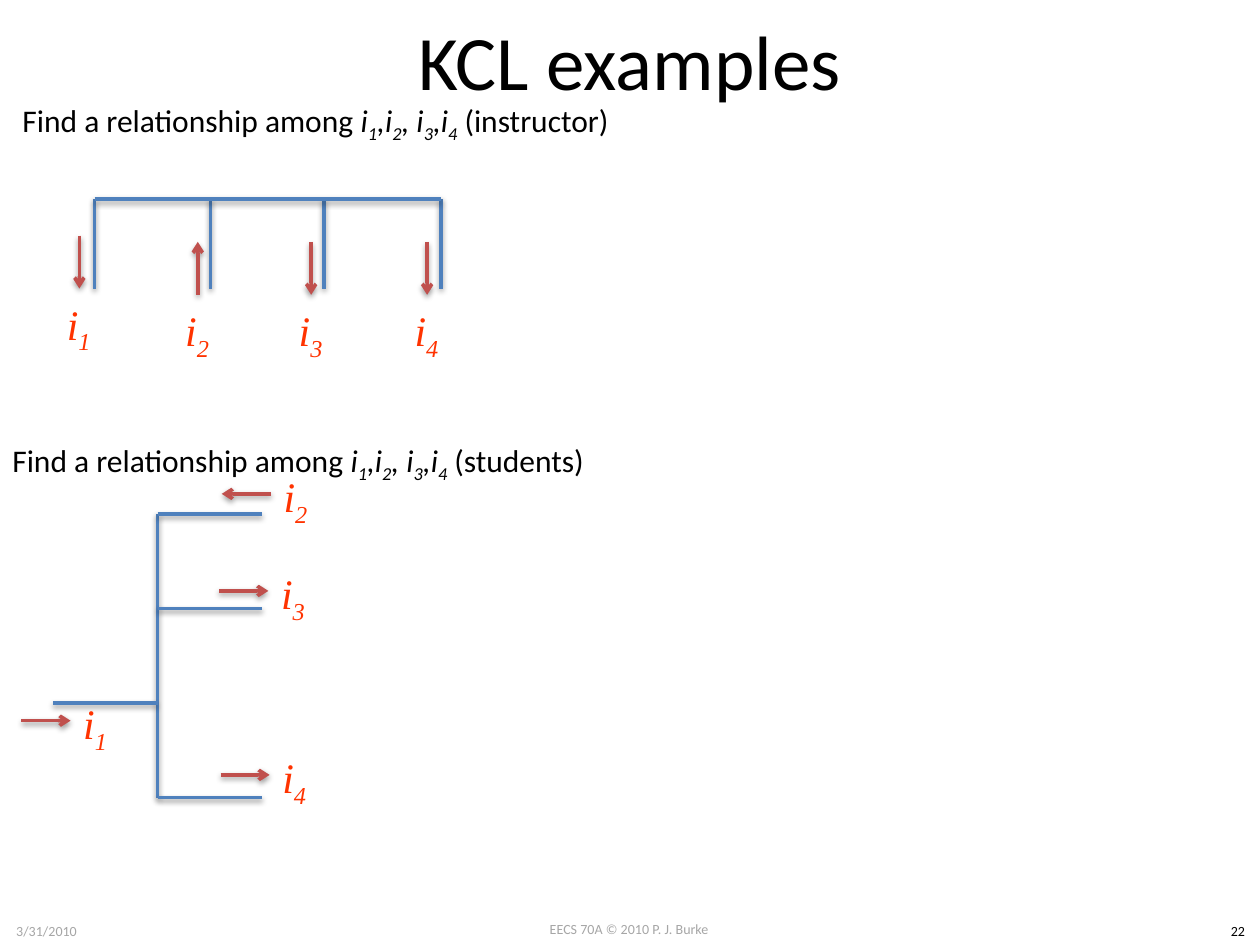
from dataclasses import dataclass

import pptx
import pptx.dml.color
import pptx.enum.shapes
import pptx.enum.text
import pptx.oxml
import pptx.oxml.ns
import pptx.util

Inches = pptx.util.Inches
Align = pptx.enum.text.PP_ALIGN
Anchor = pptx.enum.text.MSO_ANCHOR
AutoSize = pptx.enum.text.MSO_AUTO_SIZE


@dataclass(frozen=True)
class Theme:
    ink: str = "000000"
    muted: str = "A6A6A6"
    wire: str = "4F81BD"
    arrow: str = "C0504D"
    symbol: str = "FF3300"
    body_font: str = "Calibri"
    symbol_font: str = "Times New Roman"
    title_size: int = 44
    symbol_size: int = 24
    task_size: int = 18
    footer_size: int = 8
    line_width: int = 2


@dataclass(frozen=True)
class Span:
    text: str
    italic: bool = False
    subscript: bool = False


@dataclass(frozen=True)
class Style:
    size: int
    color: str
    font: str


@dataclass(frozen=True)
class Area:
    left: float
    top: float
    width: float
    height: float


@dataclass(frozen=True)
class Current:
    """A current arrow; x and y give its left or upper end."""
    number: int
    x: float
    y: float
    reverse: bool = False


THEME = Theme()
TITLE = Style(THEME.title_size, THEME.ink, THEME.body_font)
TASK = Style(THEME.task_size, THEME.ink, THEME.body_font)
SYMBOL = Style(THEME.symbol_size, THEME.symbol, THEME.symbol_font)
FOOTER = Style(THEME.footer_size, THEME.muted, THEME.body_font)
PAGE_NUMBER = Style(THEME.footer_size, THEME.ink, THEME.body_font)

SHADOW = (
    f'<a:effectLst {pptx.oxml.ns.nsdecls("a")}>'
    '<a:outerShdw blurRad="40000" dist="20000" dir="5400000" rotWithShape="0">'
    '<a:srgbClr val="000000"><a:alpha val="38000"/></a:srgbClr>'
    '</a:outerShdw></a:effectLst>'
)
ARROWHEAD = f'<a:tailEnd {pptx.oxml.ns.nsdecls("a")} type="arrow"/>'


def add_text(page, area: Area, spans: list[Span], style: Style,
             align=Align.CENTER, anchor=Anchor.TOP, wrap: bool = True,
             grow: bool = False) -> None:
    box = page.shapes.add_textbox(Inches(area.left), Inches(area.top),
                                  Inches(area.width), Inches(area.height))
    frame = box.text_frame
    frame.word_wrap = wrap
    frame.vertical_anchor = anchor
    frame.auto_size = AutoSize.SHAPE_TO_FIT_TEXT if grow else AutoSize.NONE
    para = frame.paragraphs[0]
    para.alignment = align
    for span in spans:
        run = para.add_run()
        run.text = span.text
        run.font.size = pptx.util.Pt(style.size)
        run.font.name = style.font
        run.font.italic = span.italic
        run.font.color.rgb = pptx.dml.color.RGBColor.from_string(style.color)
        if span.subscript:
            run._r.get_or_add_rPr().set("baseline", "-25000")


def add_line(page, start: tuple[float, float], end: tuple[float, float],
             color: str, arrow: bool = False) -> None:
    line = page.shapes.add_connector(
        pptx.enum.shapes.MSO_CONNECTOR.STRAIGHT,
        Inches(start[0]), Inches(start[1]), Inches(end[0]), Inches(end[1]))
    line.line.color.rgb = pptx.dml.color.RGBColor.from_string(color)
    line.line.width = pptx.util.Pt(THEME.line_width)
    if arrow:
        line.line._get_or_add_ln().append(pptx.oxml.parse_xml(ARROWHEAD))
    line._element.spPr.append(pptx.oxml.parse_xml(SHADOW))


def add_current(page, current: Current, vertical: bool) -> None:
    x, y = current.x, current.y
    start = (x, y)
    if vertical:
        end = (x, y + 0.42)
        label = Area(x - 0.39, y + 0.42, 0.77, 0.61)
    else:
        end = (x + 0.39, y)
        label = Area(x + 0.2, y - 0.26, 0.77, 0.61)
    if current.reverse:
        start, end = end, start
    add_line(page, start, end, THEME.arrow, arrow=True)
    add_text(page, label, [Span("i", True), Span(str(current.number), True, True)],
             SYMBOL, anchor=Anchor.MIDDLE)


def add_task(page, area: Area, audience: str) -> None:
    spans = [Span("Find a relationship among ")]
    for number, lead in enumerate(("i", ",i", ", i", ",i"), start=1):
        spans += [Span(lead, True), Span(str(number), True, True)]
    spans.append(Span(f" ({audience})"))
    add_text(page, area, spans, TASK, align=Align.LEFT, wrap=False, grow=True)


def add_instructor_circuit(page) -> None:
    top, bottom = 1.58, 2.29
    branches = (0.75, 1.67, 2.57, 3.5)
    for x in branches:
        add_line(page, (x, bottom), (x, top), THEME.wire)
    add_line(page, (branches[0], top), (branches[-1], top), THEME.wire)
    for current in (Current(1, 0.63, 1.87), Current(2, 1.57, 1.92, reverse=True),
                    Current(3, 2.47, 1.92), Current(4, 3.39, 1.92)):
        add_current(page, current, vertical=True)


def add_student_circuit(page) -> None:
    trunk, top, step, length = 1.25, 4.08, 0.75, 0.83
    add_line(page, (trunk, top + 3 * step), (trunk, top), THEME.wire)
    for row, side in enumerate((1, 1, -1, 1)):
        y = top + row * step
        left, right = sorted((trunk, trunk + side * length))
        add_line(page, (left, y), (right, y), THEME.wire)
    for current in (Current(2, 1.76, 3.92, reverse=True), Current(3, 1.74, 4.69),
                    Current(1, 0.17, 5.72), Current(4, 1.75, 6.15)):
        add_current(page, current, vertical=False)


def main() -> None:
    deck = pptx.Presentation()
    deck.slide_width, deck.slide_height = Inches(10), Inches(7.5)
    page = deck.slides.add_slide(deck.slide_layouts[6])

    # Footer
    for area, text, style in (
        (Area(3.83, 7.26, 2.33, 0.24), "EECS 70A © 2010 P. J. Burke", FOOTER),
        (Area(0, 7.27, 0.74, 0.24), "3/31/2010", FOOTER),
        (Area(9.65, 7.27, 0.35, 0.24), "22", PAGE_NUMBER),
    ):
        add_text(page, area, [Span(text)], style, grow=True)

    # Title
    add_text(page, Area(0.5, 0, 9, 0.95), [Span("KCL examples")], TITLE,
             anchor=Anchor.MIDDLE)

    # Instructor example
    add_task(page, Area(0.08, 0.75, 5.12, 0.4), "instructor")
    add_instructor_circuit(page)

    # Student example
    add_task(page, Area(0, 3.45, 4.84, 0.4), "students")
    add_student_circuit(page)

    deck.save("out.pptx")


if __name__ == "__main__":
    main()
